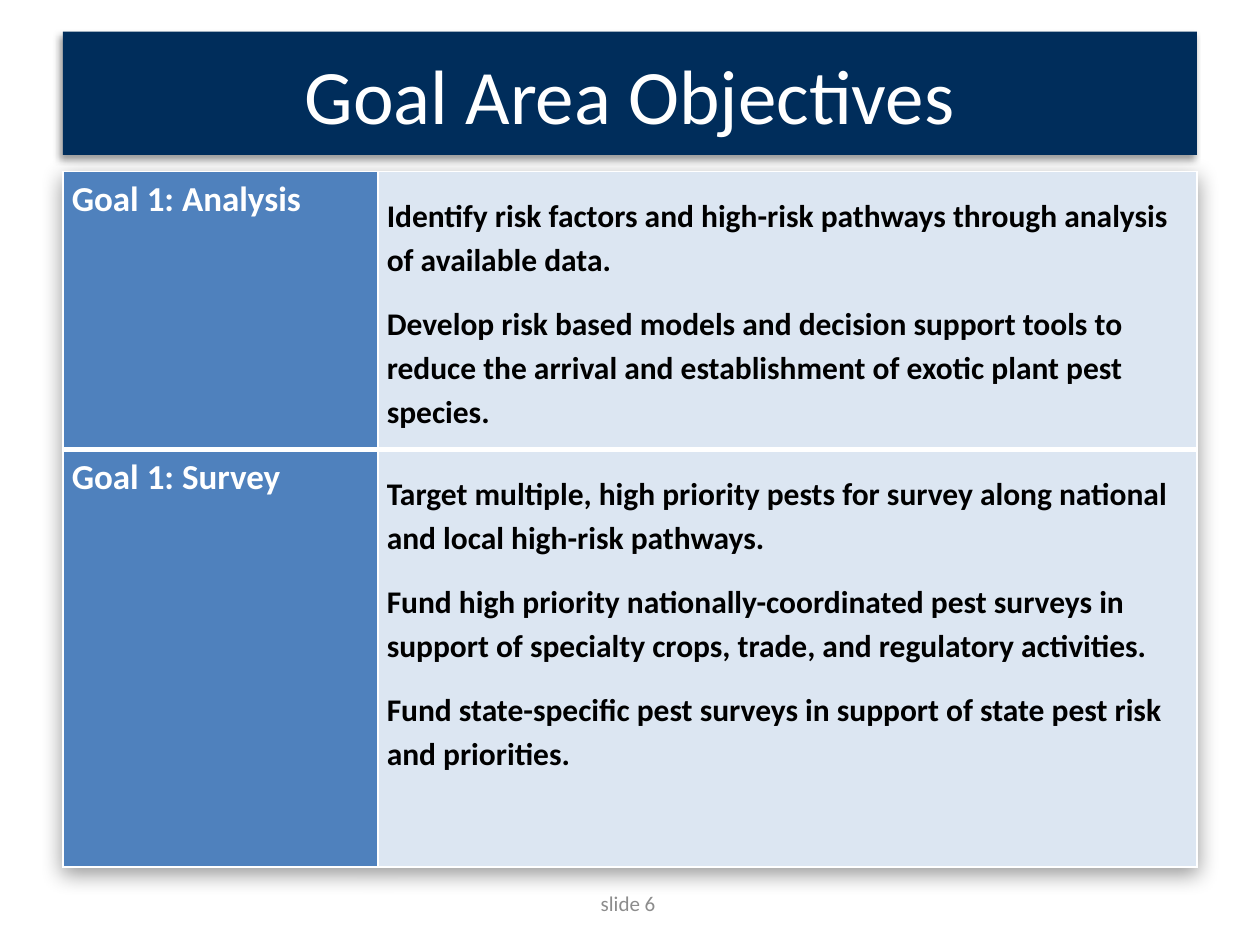
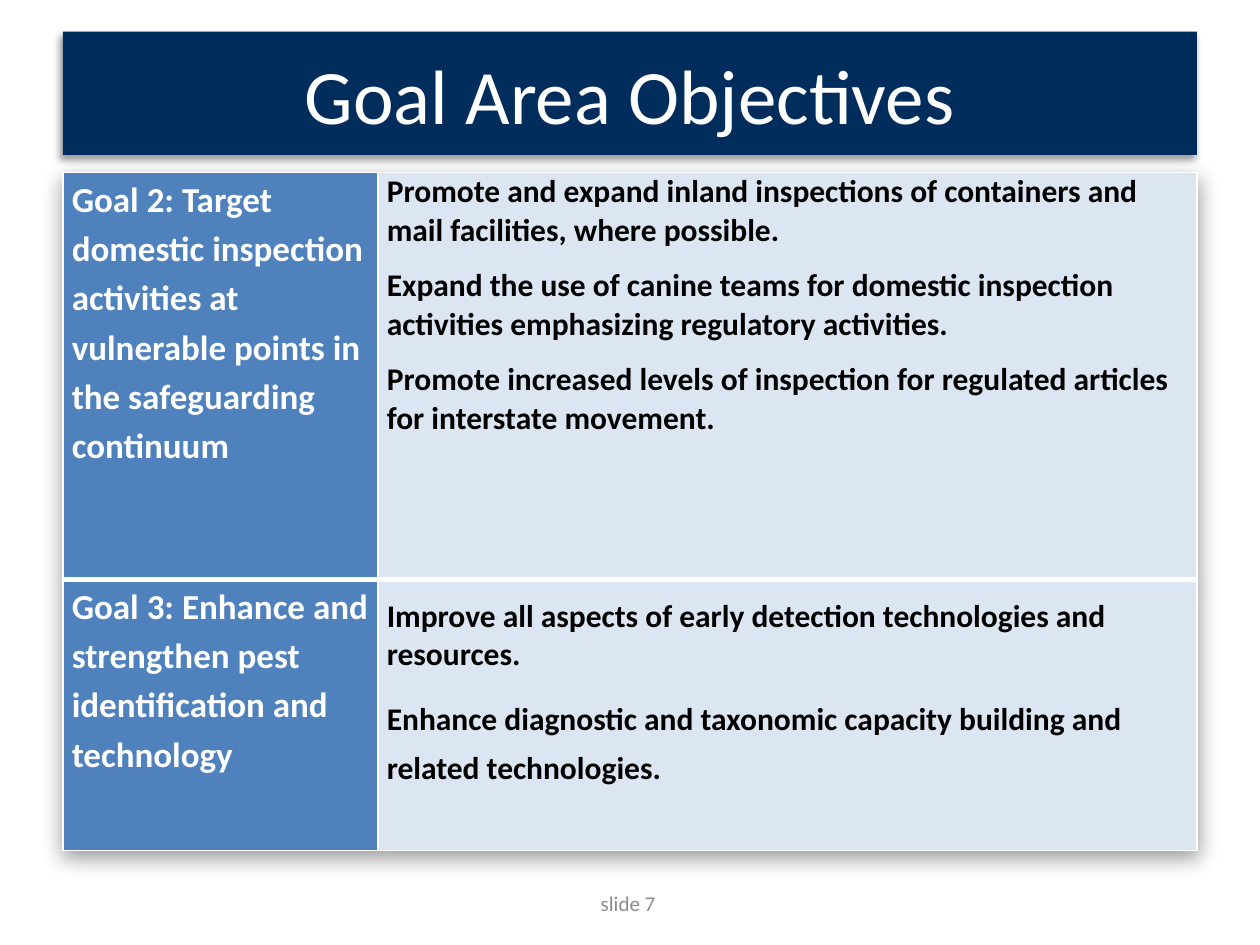
from dataclasses import dataclass
from typing import Any

from lxml.etree import SubElement
from pptx import Presentation
from pptx.dml.color import RGBColor as RGB
from pptx.enum.shapes import MSO_SHAPE as SHAPE
from pptx.enum.text import MSO_ANCHOR as ANCHOR, PP_ALIGN as ALIGN
from pptx.oxml import parse_xml
from pptx.oxml.ns import nsdecls, qn
from pptx.util import Pt

EMU_PER_PX = 9144
EMU_PER_PT = 12700
FONT = "Calibri"
NAVY, BLUE, PALE = "002D5B", "4F81BD", "DCE6F2"
WHITE, BLACK, GRAY = "FFFFFF", "000000", "8C8C8C"

TITLE = {"size": Pt(44), "bold": False}
FOOTER = {"size": Pt(12), "bold": False}
GOAL = {"size": Pt(20), "bold": True}
OBJECTIVE = {"size": Pt(18), "bold": True}


@dataclass
class Objective:
    text: str
    spacing: float = 1.15
    before: float = 11.2


@dataclass
class GoalRow:
    goal: str
    objectives: list[Objective]
    height: int
    lead: int


@dataclass
class GoalSlide:
    number: int
    top: int
    rows: list[GoalRow]


SLIDES = [
    GoalSlide(6, 136, [
        GoalRow("Goal 1: Analysis", [
            Objective("Identify risk factors and high-risk pathways through "
                      "analysis of available data."),
            Objective("Develop risk based models and decision support tools to reduce "
                      "the arrival and establishment of exotic plant pest species."),
        ], 221, 16),
        GoalRow("Goal 1: Survey", [
            Objective("Target multiple, high priority pests for survey along national "
                      "and local high-risk pathways."),
            Objective("Fund high priority nationally-coordinated pest surveys in support "
                      "of specialty crops, trade, and regulatory activities."),
            Objective("Fund state-specific pest surveys in support of state pest risk "
                      "and priorities."),
        ], 331, 16),
    ]),
    GoalSlide(7, 137, [
        GoalRow("Goal 2: Target domestic inspection activities at vulnerable points "
                "in the safeguarding continuum", [
            Objective("Promote and expand inland inspections of containers and mail "
                      "facilities, where possible.", 1),
            Objective("Expand the use of canine teams for domestic inspection activities "
                      "emphasizing regulatory activities.", 1, 9.8),
            Objective("Promote increased levels of inspection for regulated articles "
                      "for interstate movement.", 1, 9.8),
        ], 323, 0),
        GoalRow("Goal 3: Enhance and strengthen pest identification and technology", [
            Objective("Improve all aspects of early detection technologies "
                      "and resources.", 1),
            Objective("Enhance diagnostic and taxonomic capacity building and "
                      "related technologies.", 1.27, 9.2),
        ], 215, 14),
    ]),
]


def px(*values: int) -> list[int]:
    return [v * EMU_PER_PX for v in values]


def rgb(color: str) -> RGB:
    return RGB.from_string(color)


def write(p: Any, text: str, fmt: dict[str, Any], color: str) -> None:
    r = p.add_run()
    r.text = text
    for name, value in {"name": FONT, **fmt}.items():
        setattr(r.font, name, value)
    r.font.color.rgb = rgb(color)


def shadow(blur: float, dist: float, angle: int, alpha: int) -> Any:
    return parse_xml(
        f'<a:effectLst {nsdecls("a")}><a:outerShdw blurRad="{int(blur * EMU_PER_PT)}" '
        f'dist="{int(dist * EMU_PER_PT)}" dir="{angle * 60000}" algn="ctr" rotWithShape="0">'
        f'<a:srgbClr val="{BLACK}"><a:alpha val="{alpha * 1000}"/></a:srgbClr>'
        '</a:outerShdw></a:effectLst>')


def centre(sp: Any, text: str, fmt: dict[str, Any], color: str) -> None:
    tf = sp.text_frame
    tf.word_wrap = True
    tf.vertical_anchor = ANCHOR.MIDDLE
    p = tf.paragraphs[0]
    p.alignment = ALIGN.CENTER
    write(p, text, fmt, color)


def add_frame(s: Any, number: int) -> None:
    centre(s.shapes.add_textbox(*px(382, 697, 233, 40)), f"slide {number}", FOOTER, GRAY)
    sp = s.shapes.add_shape(SHAPE.RECTANGLE, *px(50, 25, 900, 98))
    sp.fill.solid()
    sp.fill.fore_color.rgb = rgb(NAVY)
    sp.line.fill.background()
    sp._element.spPr.append(shadow(4, 3, 135, 40))
    centre(sp, "Goal Area Objectives", TITLE, WHITE)


def add_borders(cell: Any, top: int, bottom: int) -> None:
    tcPr = cell._tc.get_or_add_tcPr()
    for tag, width in {"lnL": 1, "lnR": 1, "lnT": top, "lnB": bottom}.items():
        ln = SubElement(tcPr, qn(f"a:{tag}"), w=str(width * EMU_PER_PT))
        SubElement(SubElement(ln, qn("a:solidFill")), qn("a:srgbClr"), val=WHITE)


def fill_cell(cell: Any, items: list[Objective], fmt: dict[str, Any],
              color: str, fill: str, lead: int) -> None:
    cell.fill.solid()
    cell.fill.fore_color.rgb = rgb(fill)
    margins = dict(zip(("left", "top", "right", "bottom"), px(7, lead, 7, 0)))
    for side, value in margins.items():
        setattr(cell, f"margin_{side}", value)
    tf = cell.text_frame
    for i, item in enumerate(items):
        p = tf.add_paragraph() if i else tf.paragraphs[0]
        p.line_spacing = item.spacing
        p.space_before = Pt(item.before if i else 0)
        write(p, item.text, fmt, color)


def add_goals(s: Any, top: int, rows: list[GoalRow]) -> None:
    height = sum(row.height for row in rows)
    table = s.shapes.add_table(len(rows), 2, *px(50, top, 900, height)).table
    table.first_row = table.horz_banding = False
    table._tbl.tblPr.insert(0, shadow(12, 4, 90, 40))
    for column, width in zip(table.columns, px(250, 650)):
        column.width = width
    for i, row in enumerate(rows):
        table.rows[i].height = px(row.height)[0]
        goal, objectives = table.rows[i].cells
        for cell in (goal, objectives):
            add_borders(cell, 3 if i else 1, 3 if i < len(rows) - 1 else 1)
        fill_cell(goal, [Objective(row.goal)], GOAL, WHITE, BLUE, 0)
        fill_cell(objectives, row.objectives, OBJECTIVE, BLACK, PALE, row.lead)


def main() -> None:
    """Build the goal area slides and save them."""
    prs = Presentation()
    prs.slide_width, prs.slide_height = px(1000, 750)
    for goal_slide in SLIDES:
        s = prs.slides.add_slide(prs.slide_layouts[6])
        add_frame(s, goal_slide.number)
        add_goals(s, goal_slide.top, goal_slide.rows)
    prs.save("out.pptx")


if __name__ == "__main__":
    main()
